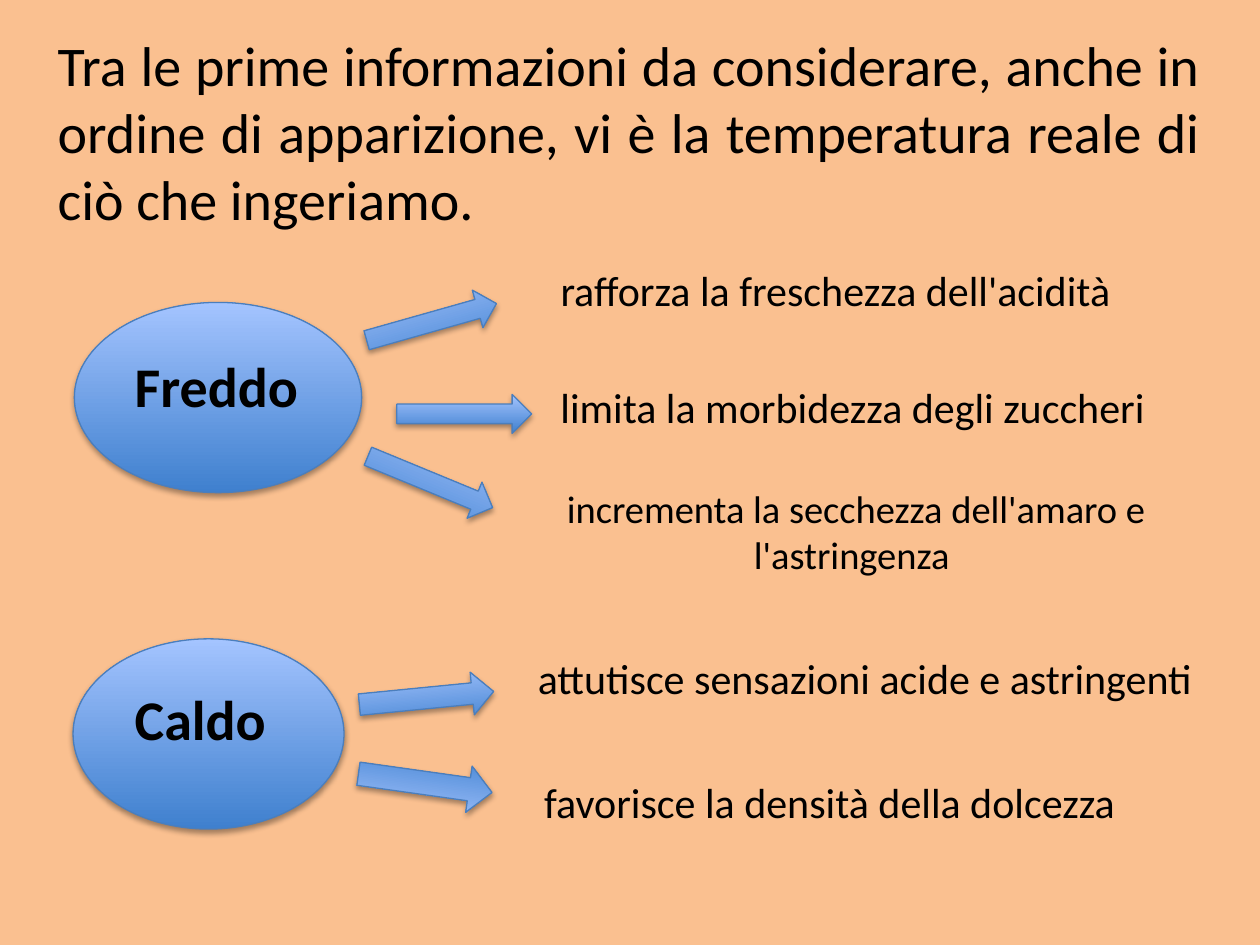
from dataclasses import dataclass
from lxml import etree
from pptx import Presentation
from pptx import util as u
from pptx.dml import color
from pptx.enum import shapes, text
from pptx.oxml import ns

COLS, ROWS = 100, 75
CELL = u.Inches(0.1)


@dataclass(frozen=True)
class Theme:
    back: str = "FAC090"
    ink: str = "000000"
    dark: str = "3F80CE"
    light: str = "A4C4FF"
    edge: str = "4B7EBC"
    font: str = "Calibri"
    head: int = 32
    body: int = 24
    small: int = 22


THEME = Theme()


def rgb(code):
    return color.RGBColor.from_string(code)


def grid(*cells):
    return [round(n * CELL) for n in cells]


def shade(shape):
    fx = etree.SubElement(shape._element.spPr, ns.qn("a:effectLst"))
    drop = etree.SubElement(fx, ns.qn("a:outerShdw"), blurRad="40000",
                            dist="23000", dir="5400000", rotWithShape="0")
    tint = etree.SubElement(drop, ns.qn("a:srgbClr"), val=THEME.ink)
    etree.SubElement(tint, ns.qn("a:alpha"), val="35000")


def solid(slide, kind, box):
    shape = slide.shapes.add_shape(kind, *grid(*box))
    shape.fill.gradient()
    shape.fill.gradient_angle = 90
    for stop, code, pos in zip(shape.fill.gradient_stops,
                               (THEME.dark, THEME.light), (0, 1)):
        stop.color.rgb = rgb(code)
        stop.position = pos
    shape.line.color.rgb = rgb(THEME.edge)
    shape.line.width = u.Pt(0.75)
    shade(shape)
    return shape


def oval(slide, *box):
    solid(slide, shapes.MSO_SHAPE.OVAL, box)


def arrow(slide, left, top, tall, turn=0, flip=False):
    shape = solid(slide, shapes.MSO_SHAPE.RIGHT_ARROW, (left, top, 10.7, tall))
    shape.rotation = turn
    if flip:
        shape._element.spPr.xfrm.set("flipV", "1")


def label(slide, words, box, size, bold=False, align=None):
    frame = slide.shapes.add_textbox(*grid(*box)).text_frame
    frame.word_wrap = align is not None
    frame.auto_size = text.MSO_AUTO_SIZE.SHAPE_TO_FIT_TEXT
    para = frame.paragraphs[0]
    para.text = words
    para.alignment = align
    font = para.font
    font.name, font.size, font.bold = THEME.font, u.Pt(size), bold
    font.color.rgb = rgb(THEME.ink)


def cold(slide):
    oval(slide, 5.9, 24, 22.8, 15.1)
    label(slide, "Freddo", (9.7, 27.4, 15.2, 6.4), THEME.head, bold=True)
    arrow(slide, 28.9, 24, 3.1, -15.8)
    arrow(slide, 31.5, 31.3, 3.1)
    arrow(slide, 28.8, 36.7, 3.1, 22.4)
    label(slide, "rafforza la freschezza dell'acidità",
          (43.5, 20.5, 46.5, 5), THEME.body)
    label(slide, "limita la morbidezza degli zuccheri",
          (43.5, 29.8, 49, 5), THEME.body)
    label(slide, "incrementa la secchezza dell'amaro e l'astringenza ",
          (38.3, 38, 59.3, 8.4), THEME.small, align=text.PP_ALIGN.CENTER)


def warm(slide):
    oval(slide, 5.8, 50.7, 21.5, 15.1)
    label(slide, "Caldo", (9.7, 53.8, 12.5, 6.4), THEME.head, bold=True)
    arrow(slide, 28.5, 53.7, 3.4, -5.6)
    arrow(slide, 28.4, 60.3, 3.7, 8, flip=True)
    label(slide, "attutisce sensazioni acide e astringenti",
          (41.7, 51.3, 54.6, 5), THEME.body)
    label(slide, "favorisce la densità della dolcezza",
          (42.2, 61.1, 48.1, 5), THEME.body)


def main():
    deck = Presentation()
    deck.slide_width, deck.slide_height = grid(COLS, ROWS)
    slide = deck.slides.add_slide(deck.slide_layouts[6])
    slide.background.fill.solid()
    slide.background.fill.fore_color.rgb = rgb(THEME.back)
    label(slide, "Tra le prime informazioni da considerare, anche in ordine di "
          "apparizione, vi è la temperatura reale di ciò che ingeriamo. ",
          (3.6, 1.9, 92.7, 17.2), THEME.head, align=text.PP_ALIGN.JUSTIFY)
    cold(slide)
    warm(slide)
    deck.save("out.pptx")


if __name__ == "__main__":
    main()
